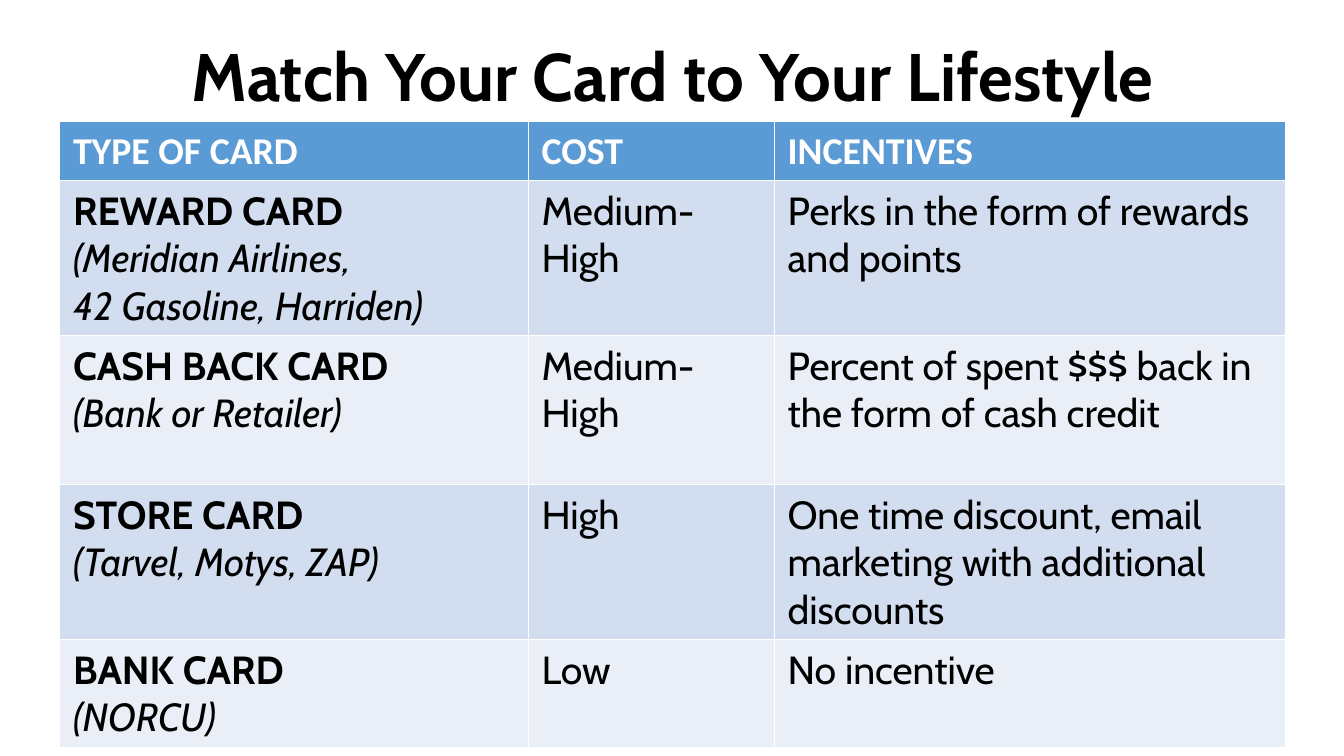
from pptx import Presentation
from pptx import util as u
from pptx.dml.color import RGBColor
from pptx.enum import text

HEADS = ["TYPE OF CARD", "COST", "INCENTIVES"]
CARDS = [
    ("REWARD CARD", ["(Meridian Airlines,", "42 Gasoline, Harriden)"],
     "Medium-High", "Perks in the form of rewards and points"),
    ("CASH BACK CARD", ["(Bank or Retailer)"],
     "Medium-High", "Percent of spent $$$ back in the form of cash credit"),
    ("STORE CARD", ["(Tarvel, Motys, ZAP)"],
     "High", "One time discount, email marketing with additional discounts"),
    ("BANK CARD", ["(NORCU)"], "Low", "No incentive"),
]
WIDTHS = [11.81, 6.2, 12.88]
HEIGHTS = [1.47, 3.76, 3.76, 3.76, 1.47]
BANDS = ["D2DEEF", "EAEFF7"]

HEAD = dict(name="Calibri", size=u.Pt(27), bold=True, italic=False)
BODY = dict(name="Cabin", size=u.Pt(28), bold=False, italic=False)
KIND = BODY | dict(bold=True)
NOTE = BODY | dict(italic=True)
TITLE = KIND | dict(size=u.Pt(48))


def tint(part, code):
    part.rgb = RGBColor.from_string(code)


def write(para, words, style, code="000000"):
    run = para.add_run()
    run.text = words
    for key, value in style.items():
        setattr(run.font, key, value)
    tint(run.font.color, code)


def paint(cell, code):
    cell.fill.solid()
    tint(cell.fill.fore_color, code)
    inset = dict(margin_left=0.34, margin_right=0.34,
                 margin_top=0.17, margin_bottom=0.17)
    for key, value in inset.items():
        setattr(cell, key, u.Cm(value))
    return cell.text_frame.paragraphs[0]


def add_title(slide, words, left, top, width, height):
    box = slide.shapes.add_textbox(*map(u.Cm, (left, top, width, height)))
    frame = box.text_frame
    frame.word_wrap = True
    frame.vertical_anchor = text.MSO_ANCHOR.MIDDLE
    para = frame.paragraphs[0]
    para.alignment = text.PP_ALIGN.CENTER
    para.line_spacing = 0.9
    write(para, words, TITLE)


def add_cards(slide, left, top, width, height):
    shape = slide.shapes.add_table(len(HEIGHTS), len(WIDTHS),
                                   *map(u.Cm, (left, top, width, height)))
    grid = shape.table
    for col, size in zip(grid.columns, WIDTHS):
        col.width = u.Cm(width * size / sum(WIDTHS))
    for row, size in zip(grid.rows, HEIGHTS):
        row.height = u.Cm(height * size / sum(HEIGHTS))

    # Header row
    for col, words in enumerate(HEADS):
        write(paint(grid.cell(0, col), "5B9BD5"), words, HEAD, "FFFFFF")

    # One row per card, in alternating bands
    for row, (kind, notes, cost, perk) in enumerate(CARDS, 1):
        paras = [paint(cell, BANDS[(row - 1) % 2])
                 for cell in grid.rows[row].cells]
        write(paras[0], kind, KIND)
        for note in notes:
            paras[0].add_line_break()
            write(paras[0], note, NOTE)
        write(paras[1], cost, BODY)
        write(paras[2], perk, BODY)


def main():
    deck = Presentation()
    deck.slide_width, deck.slide_height = u.Cm(33.87), u.Cm(19.05)
    slide = deck.slides.add_slide(deck.slide_layouts[6])
    add_title(slide, "Match Your Card to Your Lifestyle", 1.5, 1.02, 30.89, 2)
    add_cards(slide, 1.5, 3.07, sum(WIDTHS), sum(HEIGHTS))
    deck.save("out.pptx")


if __name__ == "__main__":
    main()
